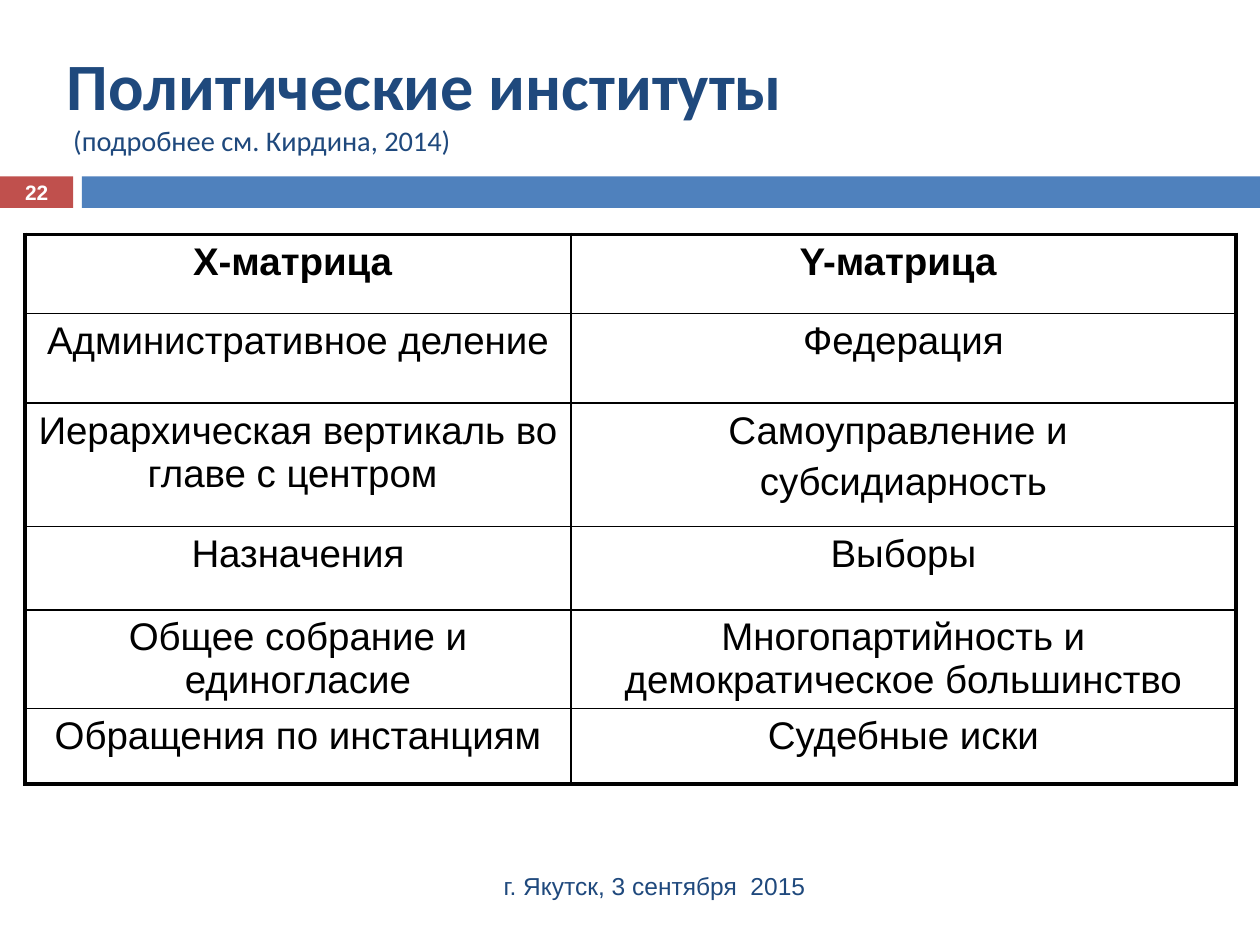
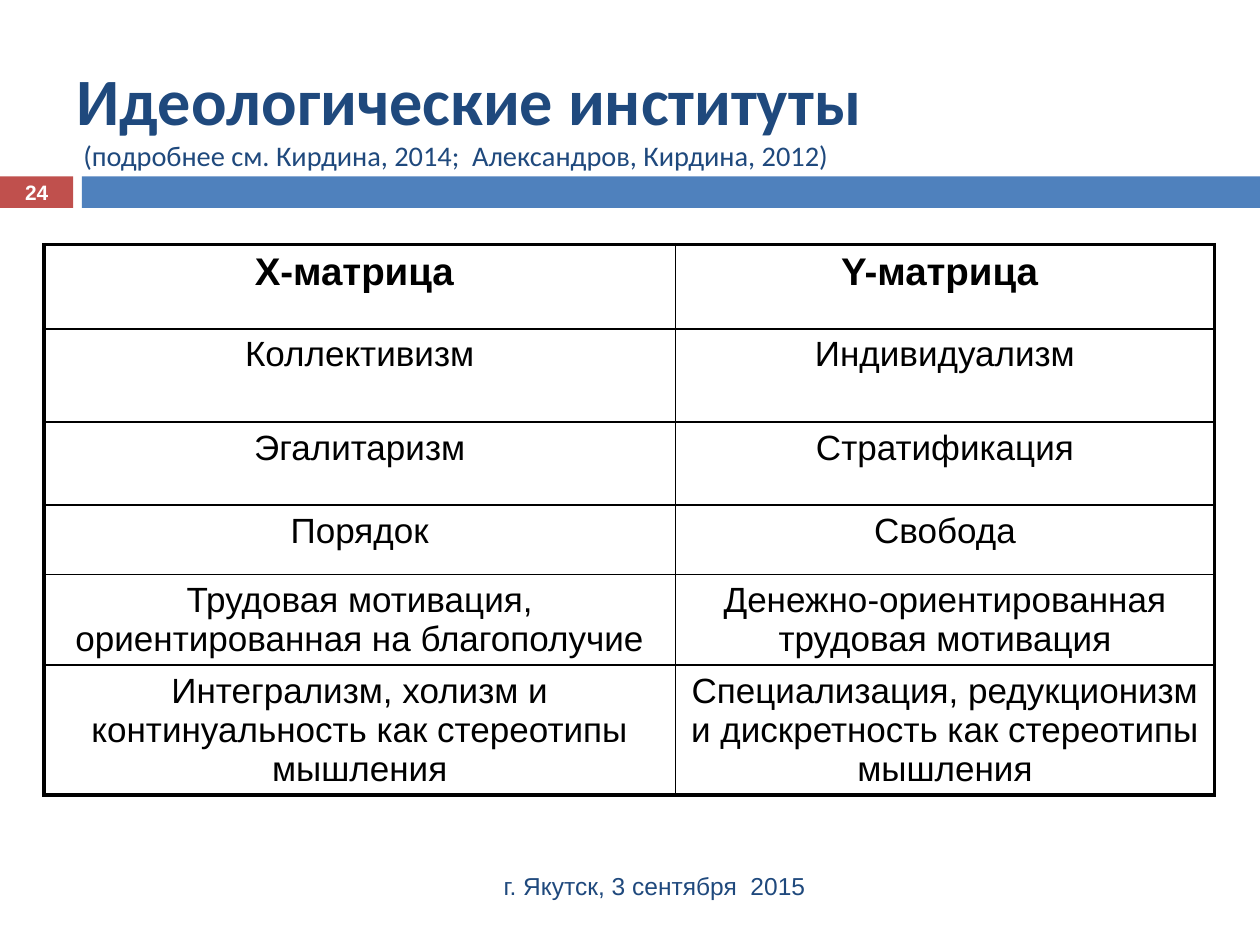
from copy import deepcopy

from lxml import etree
from pptx import Presentation
from pptx.dml.color import RGBColor
from pptx.enum.shapes import MSO_SHAPE
from pptx.enum.text import MSO_ANCHOR, MSO_AUTO_SIZE, PP_ALIGN
from pptx.oxml.ns import qn
from pptx.util import Inches, Pt

# Content
FOOTER = "г. Якутск, 3 сентября  2015  "
HEADINGS = ("Х-матрица ", "Y-матрица ")
SLIDES = [
    {
        "number": "22",
        "title": "Политические институты",
        "source": " (подробнее см. Кирдина, 2014)",
        "title_box": (0.43, 0.29, 9.17, 1.02),
        "table_corner": (0.2, 1.86),
        "columns": (4.33, 5.28),
        "row_heights": (0.63, 0.71, 0.98, 0.66, 0.78, 0.6),
        "body_size": 22,
        "rows": [
            ("Административное деление", "Федерация"),
            ("Иерархическая вертикаль во главе с центром ",
             "Самоуправление и \nсубсидиарность"),
            ("Назначения", "Выборы"),
            ("Общее собрание и единогласие",
             "Многопартийность и демократическое большинство"),
            ("Обращения по инстанциям", "Судебные иски"),
        ],
    },
    {
        "number": "24",
        "title": "Идеологические институты",
        "source": " (подробнее см. Кирдина, 2014;  Александров, Кирдина, 2012)",
        "title_box": (0.51, 0.44, 9.17, 0.96),
        "table_corner": (0.35, 1.94),
        "columns": (5.01, 4.28),
        "row_heights": (0.67, 0.74, 0.66, 0.55, 0.72, 1.03),
        "body_size": 20,
        "rows": [
            ("Коллективизм", "Индивидуализм"),
            ("Эгалитаризм", "Стратификация"),
            ("Порядок", "Свобода"),
            ("Трудовая мотивация, ориентированная на благополучие",
             "Денежно-ориентированная трудовая мотивация"),
            ("Интегрализм, холизм и континуальность как стереотипы мышления",
             "Специализация, редукционизм и дискретность как стереотипы мышления"),
        ],
    },
]

# Shared style
COLORS = {"navy": "1F497D", "blue": "4F81BD", "red": "C0504D",
          "black": "000000", "white": "FFFFFF"}
BANDS = [("red", (0, 1.4, 0.58, 0.25)), ("blue", (0.65, 1.4, 9.35, 0.25))]
NUMBER_BOX = (0, 1.39, 0.58, 0.27)
FOOTER_BOX = (0.67, 6.83, 5.93, 0.4)
HEADING_SIZE = 22
OUTER_LINE, INNER_LINE = 2.25, 1


def inches(values):
    return [Inches(value) for value in values]


def format_run(run, size, color, bold=False, font="Arial"):
    run.font.name = font
    run.font.size = Pt(size)
    run.font.bold = bold
    run.font.color.rgb = RGBColor.from_string(COLORS[color])


def add_title(slide, title, source, box):
    shape = slide.shapes.title
    shape.left, shape.top, shape.width, shape.height = inches(box)
    text_frame = shape.text_frame
    text_frame.auto_size = MSO_AUTO_SIZE.NONE
    text_frame.vertical_anchor = MSO_ANCHOR.MIDDLE
    paragraph = text_frame.paragraphs[0]
    paragraph.text = f"{title}\v{source}"
    paragraph.alignment = PP_ALIGN.LEFT
    title_run, source_run = paragraph.runs
    format_run(title_run, 37.8, "navy", True, "Calibri")
    format_run(source_run, 16.2, "navy", False, "Calibri")
    # The line break takes the size of the title
    line_break = paragraph._p.find(qn("a:br"))
    line_break.append(deepcopy(title_run._r.rPr))


def add_bands(slide):
    for color, box in BANDS:
        band = slide.shapes.add_shape(MSO_SHAPE.RECTANGLE, *inches(box))
        band.shadow.inherit = False
        band.fill.solid()
        band.fill.fore_color.rgb = RGBColor.from_string(COLORS[color])
        band.line.fill.background()


def add_label(slide, text, box, alignment, size, color, bold=False):
    text_frame = slide.shapes.add_textbox(*inches(box)).text_frame
    text_frame.word_wrap = True
    text_frame.vertical_anchor = MSO_ANCHOR.MIDDLE
    paragraph = text_frame.paragraphs[0]
    paragraph.text = text
    paragraph.alignment = alignment
    format_run(paragraph.runs[0], size, color, bold)


def set_borders(cell, widths):
    properties = cell._tc.get_or_add_tcPr()
    for index, (side, width) in enumerate(widths.items()):
        line = etree.Element(qn(f"a:ln{side}"), w=str(Pt(width)))
        fill = etree.SubElement(line, qn("a:solidFill"))
        etree.SubElement(fill, qn("a:srgbClr"), val=COLORS["black"])
        properties.insert(index, line)


def add_matrix_table(slide, content):
    rows = [HEADINGS] + content["rows"]
    columns, heights = content["columns"], content["row_heights"]
    box = (*content["table_corner"], sum(columns), sum(heights))
    table = slide.shapes.add_table(len(rows), len(columns), *inches(box)).table
    table.first_row = table.horz_banding = False
    for column, width in zip(table.columns, columns):
        column.width = Inches(width)
    for row, height in zip(table.rows, heights):
        row.height = Inches(height)

    for row_index, texts in enumerate(rows):
        is_heading = row_index == 0
        size = HEADING_SIZE if is_heading else content["body_size"]
        for column_index, text in enumerate(texts):
            cell = table.cell(row_index, column_index)
            cell.fill.background()
            cell.text_frame.text = text
            for index, paragraph in enumerate(cell.text_frame.paragraphs):
                paragraph.alignment = PP_ALIGN.CENTER
                if index:
                    paragraph.space_before = Pt(size * 0.2)
                format_run(paragraph.runs[0], size, "black", is_heading)
            on_edge = {"L": column_index == 0,
                       "R": column_index == len(columns) - 1,
                       "T": is_heading,
                       "B": row_index == len(rows) - 1}
            set_borders(cell, {side: OUTER_LINE if outer else INNER_LINE
                               for side, outer in on_edge.items()})


def main():
    presentation = Presentation()
    presentation.slide_width = Inches(10)
    presentation.slide_height = Inches(7.5)
    title_only = presentation.slide_layouts[5]
    for content in SLIDES:
        slide = presentation.slides.add_slide(title_only)
        add_bands(slide)
        add_title(slide, content["title"], content["source"], content["title_box"])
        add_matrix_table(slide, content)
        add_label(slide, FOOTER, FOOTER_BOX, PP_ALIGN.RIGHT, 14, "navy")
        add_label(slide, content["number"], NUMBER_BOX, PP_ALIGN.CENTER,
                  11.9, "white", True)
    presentation.save("out.pptx")


if __name__ == "__main__":
    main()
